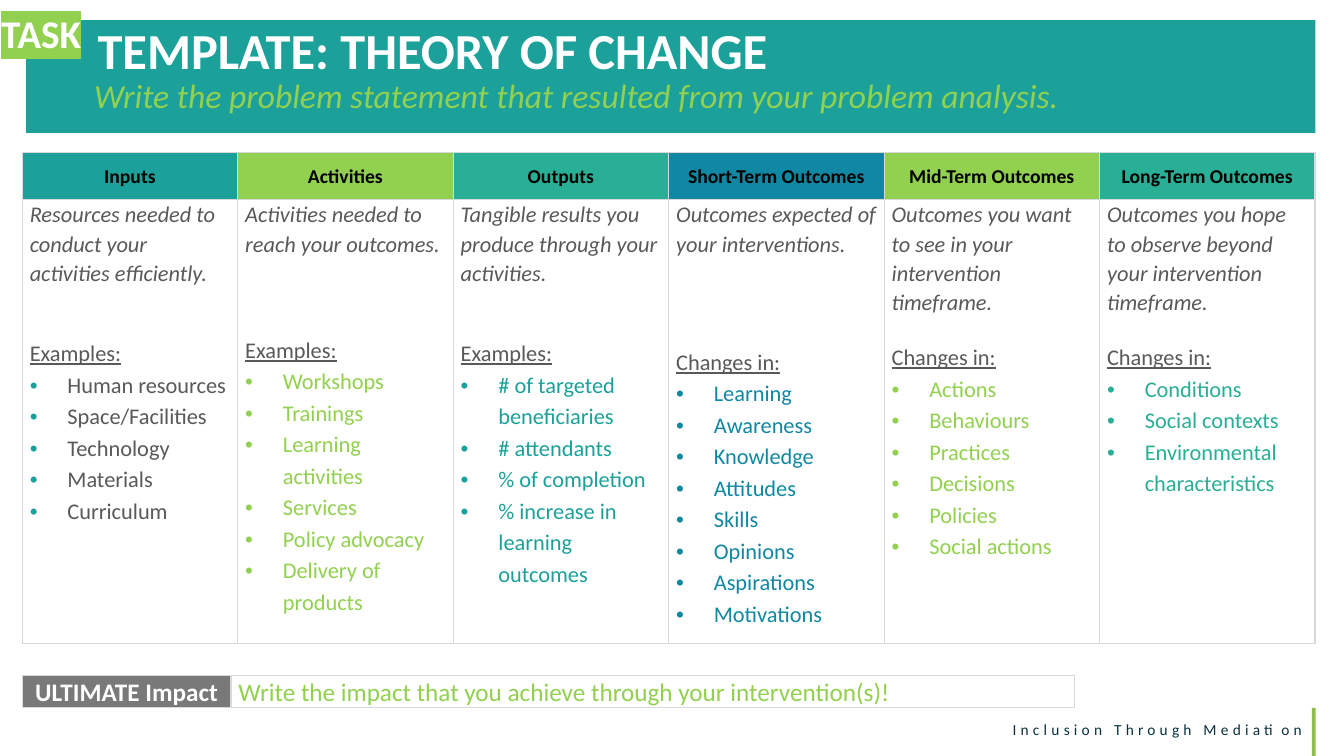
from lxml.etree import SubElement
from pptx import Presentation
from pptx.dml.color import RGBColor
from pptx.enum.shapes import MSO_SHAPE as Shape
from pptx.enum.text import MSO_ANCHOR as Anchor, PP_ALIGN as Align
from pptx.oxml.ns import qn
from pptx.util import Cm, Pt

TITLE = "TEMPLATE: THEORY OF CHANGE"
PROMPT = "Write the problem statement that resulted from your problem analysis."
TAG = "TASK"
FOOTER = "Inclusion Through Mediation"
IMPACT = ("ULTIMATE Impact",
          "Write the impact that you achieve through your intervention(s)!")

# heading, heading fill, description, gap above label (pt), label, item colour, bullet colour, items
STAGES = [
    ("Inputs", "teal", "Resources needed to conduct your activities efficiently.",
     36.5, "Examples:", "grey", "teal",
     ["Human resources", "Space/Facilities", "Technology", "Materials", "Curriculum"]),
    ("Activities", "lime", "Activities needed to reach your outcomes.",
     55, "Examples:", "lime", "lime",
     ["Workshops", "Trainings", "Learning activities", "Services", "Policy advocacy",
      "Delivery of products"]),
    ("Outputs", "mint", "Tangible results you produce through your activities.",
     36.5, "Examples:", "teal", "teal",
     ["# of targeted beneficiaries", "# attendants", "% of completion",
      "% increase in learning outcomes"]),
    ("Short-Term Outcomes", "blue", "Outcomes expected of your interventions.",
     63.5, "Changes in:", "blue", "blue",
     ["Learning", "Awareness", "Knowledge", "Attitudes", "Skills", "Opinions",
      "Aspirations", "Motivations"]),
    ("Mid-Term Outcomes", "lime", "Outcomes you want to see in your intervention timeframe.",
     18.5, "Changes in:", "lime", "lime",
     ["Actions", "Behaviours", "Practices", "Decisions", "Policies", "Social actions"]),
    ("Long-Term Outcomes", "mint",
     "Outcomes you hope to observe beyond your intervention timeframe.",
     18.5, "Changes in:", "mint", "mint",
     ["Conditions", "Social contexts", "Environmental characteristics"]),
]

THEME = {
    "font": "Calibri",
    "colours": {"teal": "1BA19A", "lime": "92D050", "mint": "28AF95", "blue": "1188A3",
                "grey": "595959", "white": "FFFFFF", "black": "000000", "slate": "797979",
                "navy": "08313F", "leaf": "8CBF4B", "border": "D9D9D9"},
    "sizes": {"title": 36, "tag": 28, "prompt": 24, "impact": 18, "body": 16,
              "heading": 14, "footer": 11},
}

LEFT = 0.56
STAGE_TOP, STAGE_WIDTH, STAGE_ROWS = 3.84, 5.43, [1.19, 11.18]
IMPACT_TOP, IMPACT_COLUMNS, IMPACT_ROW = 17.02, [5.26, 21.26], 0.79
BULLET_INDENT = 0.95


def colour(name):
    return RGBColor.from_string(THEME["colours"][name])


def apply(target, values):
    for name, value in values.items():
        setattr(target, name, value)


def write(frame, text, size, ink, new=False, layout=None, **style):
    """Put one formatted run in the first paragraph, or in a new one."""
    paragraph = frame.add_paragraph() if new else frame.paragraphs[0]
    apply(paragraph, {"line_spacing": 1.07, **(layout or {})})
    run = paragraph.add_run()
    run.text = text
    apply(run.font, {"name": THEME["font"], "size": Pt(THEME["sizes"][size]),
                     "bold": False, **style})
    run.font.color.rgb = colour(ink)
    return paragraph, run


def add_bullet(paragraph, ink):
    properties = paragraph._p.get_or_add_pPr()
    properties.set("marL", str(Cm(BULLET_INDENT)))
    properties.set("indent", str(-Cm(BULLET_INDENT)))
    bullet_colour = SubElement(properties, qn("a:buClr"))
    SubElement(bullet_colour, qn("a:srgbClr"), val=THEME["colours"][ink])
    SubElement(properties, qn("a:buFont"), typeface="Arial")
    SubElement(properties, qn("a:buChar"), char="•")


def add_highlight(run, ink):
    highlight = run.font._element.makeelement(qn("a:highlight"), {})
    SubElement(highlight, qn("a:srgbClr"), val=THEME["colours"][ink])
    run.font._element.find(qn("a:solidFill")).addnext(highlight)


def add_box(slide, box, fill):
    shape = slide.shapes.add_shape(Shape.RECTANGLE, *map(Cm, box))
    shape.shadow.inherit = False
    shape.fill.solid()
    shape.fill.fore_color.rgb = colour(fill)
    shape.line.fill.background()


def add_text(slide, box, text, size, ink, frame_style=None, **style):
    frame = slide.shapes.add_textbox(*map(Cm, box)).text_frame
    apply(frame, {"word_wrap": True, **(frame_style or {})})
    return write(frame, text, size, ink, **style)[1]


def style_cell(cell, fill=None, anchor=Anchor.TOP):
    apply(cell, {"margin_left": Cm(0.19), "margin_right": Cm(0.19), "margin_top": 0,
                 "margin_bottom": 0, "vertical_anchor": anchor})
    properties = cell._tc.get_or_add_tcPr()
    for side in ("lnL", "lnR", "lnT", "lnB"):
        line = SubElement(properties, qn(f"a:{side}"), w=str(Pt(1)))
        line_fill = SubElement(line, qn("a:solidFill"))
        SubElement(line_fill, qn("a:srgbClr"), val=THEME["colours"]["border"])
    if fill:
        cell.fill.solid()
        cell.fill.fore_color.rgb = colour(fill)
    else:
        cell.fill.background()


def add_grid(slide, top, widths, heights):
    """Add a plain table with the given column widths and row heights."""
    table = slide.shapes.add_table(len(heights), len(widths), Cm(LEFT), Cm(top),
                                   Cm(sum(widths)), Cm(sum(heights))).table
    apply(table, {"first_row": False, "horz_banding": False})
    for column, width in zip(table.columns, widths):
        column.width = Cm(width)
    for row, height in zip(table.rows, heights):
        row.height = Cm(height)
    return table


def add_stages(slide):
    table = add_grid(slide, STAGE_TOP, [STAGE_WIDTH] * len(STAGES), STAGE_ROWS)
    for column, stage in enumerate(STAGES):
        heading, fill, description, gap, label, ink, bullet_ink, items = stage
        head, body = table.cell(0, column), table.cell(1, column)
        style_cell(head, fill, Anchor.MIDDLE)
        write(head.text_frame, heading, "heading", "black", bold=True,
              layout={"alignment": Align.CENTER})
        style_cell(body)
        write(body.text_frame, description, "body", "grey", italic=True)
        write(body.text_frame, label, "body", "grey", new=True, underline=True,
              layout={"space_before": Pt(gap)})
        for item in items:
            paragraph, _ = write(body.text_frame, item, "body", ink, new=True,
                                 layout={"line_spacing": 1.15})
            add_bullet(paragraph, bullet_ink)


def add_impact(slide):
    table = add_grid(slide, IMPACT_TOP, IMPACT_COLUMNS, [IMPACT_ROW])
    label, answer = table.cell(0, 0), table.cell(0, 1)
    style_cell(label, "slate", Anchor.MIDDLE)
    write(label.text_frame, IMPACT[0], "impact", "white", bold=True,
          layout={"alignment": Align.CENTER})
    style_cell(answer)
    write(answer.text_frame, IMPACT[1], "impact", "lime")


def main():
    presentation = Presentation()
    apply(presentation, {"slide_width": Cm(33.87), "slide_height": Cm(19.05)})
    slide = presentation.slides.add_slide(presentation.slide_layouts[6])

    footer = add_text(slide, (1.32, 18.03, 31.75, 0.74), FOOTER, "footer", "navy",
                      layout={"alignment": Align.RIGHT, "line_spacing": 1.0})
    footer.font._element.set("spc", "300")
    add_box(slide, (0.66, 0.51, 32.49, 2.84), "teal")
    add_box(slide, (33.06, 17.84, 0.1, 1.21), "leaf")
    add_text(slide, (2.21, 0.43, 28.22, 1.8), TITLE, "title", "white",
             {"vertical_anchor": Anchor.MIDDLE}, bold=True, layout={"line_spacing": 0.9})
    add_text(slide, (0.86, 1.68, 27.33, 1.35), PROMPT, "prompt", "lime", italic=True,
             layout={"alignment": Align.CENTER})
    add_stages(slide)
    tag = add_text(slide, (0, 0.25, 7.6, 1.63), TAG, "tag", "white",
                   {"margin_left": Cm(0.03)}, bold=True, layout={"line_spacing": 0.9})
    add_highlight(tag, "lime")
    add_impact(slide)
    presentation.save("out.pptx")


if __name__ == "__main__":
    main()
